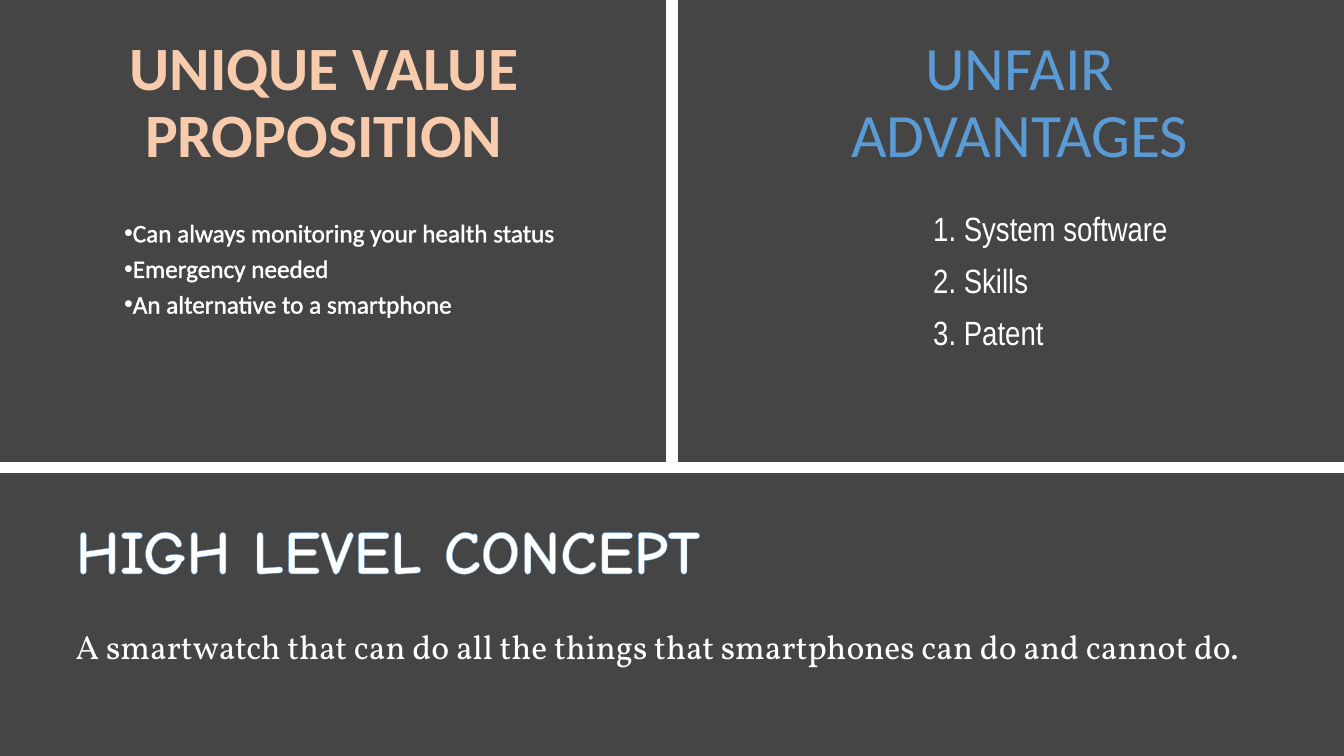
from lxml import etree
from pptx import Presentation
from pptx.dml.color import RGBColor as RGB
from pptx.enum.shapes import MSO_CONNECTOR as LINE
from pptx.enum.text import MSO_ANCHOR as ANCHOR, PP_ALIGN as ALIGN
from pptx.oxml.ns import qn
from pptx.util import Pt

WIDE, HIGH = 960, 540
MID, SPLIT = 480, 334

deck = Presentation()
deck.slide_width, deck.slide_height = Pt(WIDE), Pt(HIGH)
slide = deck.slides.add_slide(deck.slide_layouts[6])


def paint(fill, color):
    fill.solid()
    fill.fore_color.rgb = RGB.from_string(color)


def write(box, lines, font="Calibri", size=44, color="FFFFFF", bold=False,
          edge=None, align=ALIGN.LEFT, anchor=ANCHOR.TOP, space=0.9,
          before=0, after=6, bullet=None):
    frame = slide.shapes.add_textbox(*map(Pt, box)).text_frame
    frame.word_wrap = True
    frame.vertical_anchor = anchor
    for i, line in enumerate(lines):
        para = frame.paragraphs[0] if i == 0 else frame.add_paragraph()
        para.text = line
        para.alignment, para.line_spacing = align, space
        para.space_before, para.space_after = Pt(before), Pt(after)
        if bullet:
            props = para._p.get_or_add_pPr()
            props.set("marL", "0")
            props.set("indent", str(-Pt(18)))
            etree.SubElement(props, qn("a:buFont")).set("typeface", "Arial")
            etree.SubElement(props, qn("a:buChar")).set("char", bullet)
        for run in para.runs:
            face = run.font
            face.name, face.size, face.bold = font, Pt(size), bold
            paint(face.fill, color)
            if edge:
                tone, width = edge
                ln = etree.Element(qn("a:ln"), w=str(Pt(width)))
                fill = etree.SubElement(ln, qn("a:solidFill"))
                etree.SubElement(fill, qn("a:srgbClr")).set("val", tone)
                face._element.insert(0, ln)


# Background
paint(slide.background.fill, "454545")

# Dividers between the three panels
for ends in ((MID, 0, MID, SPLIT), (0, SPLIT, WIDE, SPLIT)):
    rule = slide.shapes.add_connector(LINE.STRAIGHT, *map(Pt, ends))
    rule.line.width = Pt(8)
    paint(rule.line.fill, "FFFFFF")
    etree.SubElement(rule._element.spPr, qn("a:effectLst"))

# Unique value proposition
write((17, 9.5, 429, 130), ["UNIQUE VALUE PROPOSITION"], color="F8CBAD",
      bold=True, edge=("ED7D31", 1.75), align=ALIGN.CENTER,
      anchor=ANCHOR.MIDDLE)
write((81.5, 154, 411, 100),
      ["Can always monitoring your health status", "Emergency needed",
       "An alternative to a smartphone"],
      size=18, edge=("FFFFFF", 0.75), bullet="•")

# Unfair advantages
write((566.5, -95, 324, 338.5), ["UNFAIR ADVANTAGES"], color="5B9BD5",
      align=ALIGN.CENTER, anchor=ANCHOR.MIDDLE)
write((659.5, 136, 282, 189), ["1. System software\v2. Skills\v3. Patent"],
      font="Arial Narrow", size=24, space=1.3, before=10)

# High level concept
write((47, 361, 872, 62), ["HIGH LEVEL CONCEPT"], font="Comic Neue",
      bold=True, edge=("5B9BD5", 0.8), anchor=ANCHOR.BOTTOM)
write((47, 429, 878, 90),
      ["A smartwatch that can do all the things that smartphones can do "
       "and cannot do."],
      font="Vollkorn", size=24, space=1.5, after=0)

deck.save("out.pptx")
